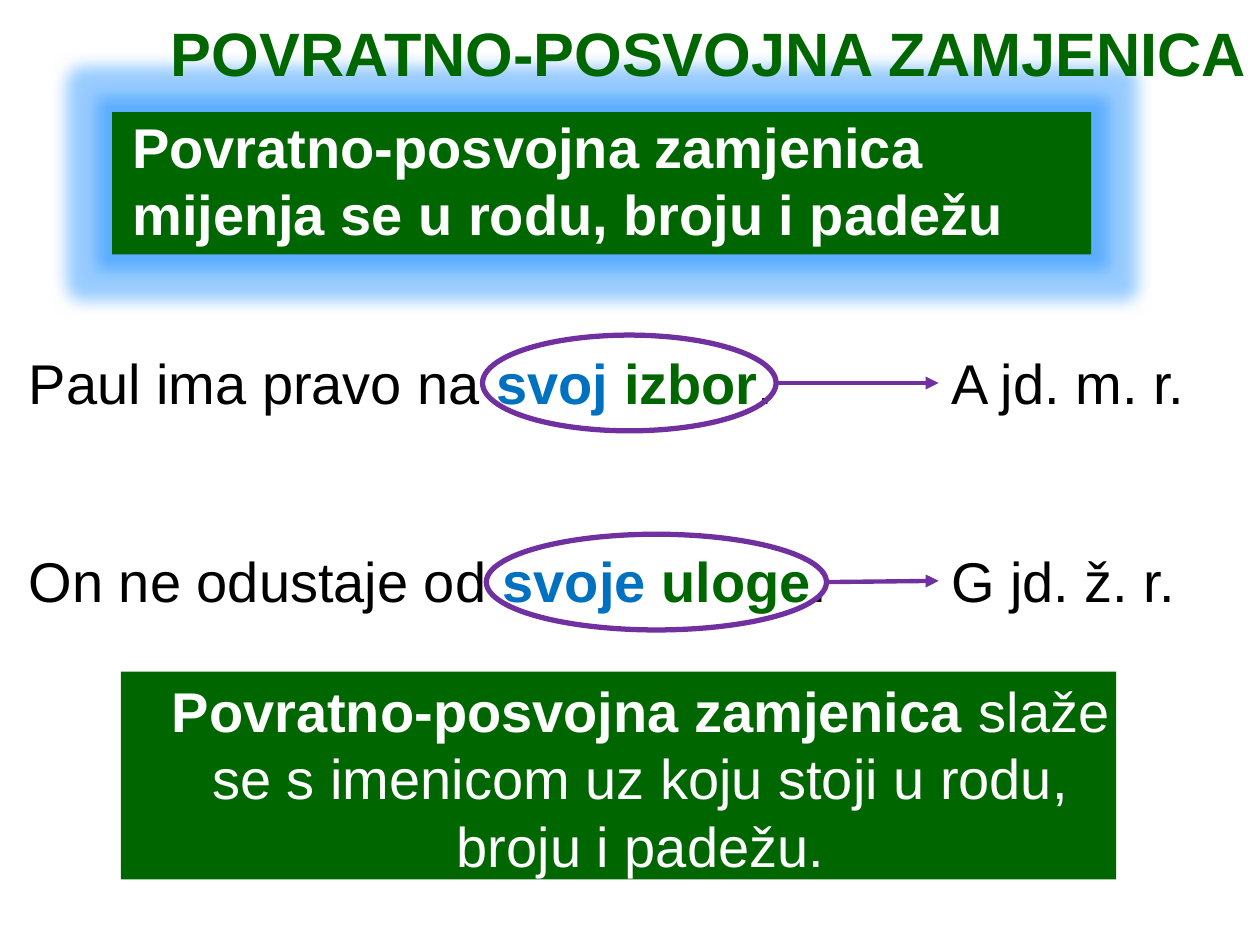
from dataclasses import dataclass

from lxml import etree
from pptx import Presentation
from pptx.dml.color import RGBColor
from pptx.enum import shapes, text
from pptx.oxml import parse_xml
from pptx.oxml.ns import nsdecls, qn
from pptx.util import Inches, Pt


@dataclass(frozen=True)
class Theme:
    font: str = "Arial"
    title_size: int = 35
    text_size: int = 32
    green: str = "006600"
    blue: str = "0070C0"
    purple: str = "7030A0"
    black: str = "000000"
    white: str = "FFFFFF"
    glow: str = "0080FF"


THEME = Theme()
MIDDLE = text.MSO_ANCHOR.MIDDLE
TOP = text.MSO_ANCHOR.TOP
BOTTOM = text.MSO_ANCHOR.BOTTOM
LEFT, CENTER, RIGHT = text.PP_ALIGN.LEFT, text.PP_ALIGN.CENTER, text.PP_ALIGN.RIGHT

TITLE = "POVRATNO-POSVOJNA ZAMJENICA"
RULES = [
    dict(runs=[("Povratno-posvojna zamjenica mijenja se u rodu, broju i padežu", THEME.white, True)],
         panel=(0.89, 0.89, 7.77, 1.13), box=(0.98, 0.65, 7.88, 1.35),
         align=LEFT, anchor=BOTTOM, glow=True),
    dict(runs=[("Povratno-posvojna zamjenica ", THEME.white, True),
               ("slaže se s imenicom uz koju stoji u rodu, broju i padežu.", THEME.white, False)],
         panel=(0.96, 5.33, 7.9, 1.65), box=(1.08, 5.33, 8.01, 1.08),
         align=CENTER, anchor=TOP, glow=False),
]
# start, pronoun, noun, form, text top, text width, form width, ellipse box, arrow heights
EXAMPLES = [
    ("Paul ima pravo na ", "svoj ", "izbor", "A jd. m. r.", 2.72, 6.15, 2.07,
     (3.83, 2.66, 2.33, 0.76), (3.04, 3.04)),
    ("On ne odustaje od ", "svoje ", "uloge", "G jd. ž. r.", 4.29, 6.57, 2,
     (3.86, 4.24, 2.7, 0.76), (4.62, 4.61)),
]
SENTENCE_LEFT, FORM_LEFT, LINE_HEIGHT = 0.13, 7.45, 0.64


def color(value):
    return RGBColor.from_string(value)


def place(shape, box):
    shape.left, shape.top, shape.width, shape.height = map(Inches, box)


def write(shape, runs, size=THEME.text_size, align=LEFT, anchor=TOP, wrap=True,
          before=0, spacing=1.0, margins=(0.1, 0.05)):
    """Fill a shape with one unbulleted paragraph of (words, colour, bold) runs."""
    frame = shape.text_frame
    frame.word_wrap, frame.vertical_anchor = wrap, anchor
    frame.auto_size = text.MSO_AUTO_SIZE.NONE if wrap else text.MSO_AUTO_SIZE.SHAPE_TO_FIT_TEXT
    frame.margin_left = frame.margin_right = Inches(margins[0])
    frame.margin_top = frame.margin_bottom = Inches(margins[1])
    paragraph = frame.paragraphs[0]
    paragraph.alignment, paragraph.line_spacing = align, spacing
    paragraph.space_before = Pt(before)
    properties = paragraph._p.get_or_add_pPr()
    properties.set("marL", "0")
    properties.set("indent", "0")
    etree.SubElement(properties, qn("a:buNone"))
    for words, tint, bold in runs:
        run = paragraph.add_run()
        run.text = words
        run.font.name, run.font.size, run.font.bold = THEME.font, Pt(size), bold
        run.font.color.rgb = color(tint)


def add_panel(slide, box, glow):
    panel = slide.shapes.add_shape(shapes.MSO_SHAPE.RECTANGLE, *map(Inches, box))
    panel.fill.solid()
    panel.fill.fore_color.rgb = color(THEME.green)
    panel.line.fill.background()
    panel.shadow.inherit = False
    if glow:
        panel._element.spPr.find(qn("a:effectLst")).append(parse_xml(
            f'<a:glow {nsdecls("a")} rad="{Pt(18)}"><a:srgbClr val="{THEME.glow}">'
            '<a:alpha val="40000"/></a:srgbClr></a:glow>'))
    # Panels lie behind the placeholders that hold their text.
    slide.shapes._spTree.insert(2, panel._element)


def add_ellipse(slide, box):
    ellipse = slide.shapes.add_shape(shapes.MSO_SHAPE.OVAL, *map(Inches, box))
    ellipse.fill.background()
    ellipse.line.color.rgb = color(THEME.purple)
    ellipse.line.width = Pt(3)
    ellipse.shadow.inherit = False


def add_arrow(slide, start, end):
    arrow = slide.shapes.add_connector(
        shapes.MSO_CONNECTOR.STRAIGHT, *map(Inches, start + end))
    arrow.line.color.rgb = color(THEME.purple)
    arrow.line.width = Pt(2.5)
    etree.SubElement(arrow.line._get_or_add_ln(), qn("a:tailEnd"), type="triangle")
    etree.SubElement(arrow._element.spPr, qn("a:effectLst"))


def add_example(slide, start, pronoun, noun, form, top, width, form_width, ellipse, heights):
    sentence = [(start, THEME.black, False), (pronoun, THEME.blue, True),
                (noun, THEME.green, True), (".", THEME.black, False)]
    for left, span, runs in [(SENTENCE_LEFT, width, sentence),
                             (FORM_LEFT, form_width, [(form, THEME.black, False)])]:
        box = slide.shapes.add_textbox(*map(Inches, (left, top, span, LINE_HEIGHT)))
        write(box, runs, wrap=False)
    add_arrow(slide, (ellipse[0] + ellipse[2], heights[0]), (FORM_LEFT, heights[1]))
    add_ellipse(slide, ellipse)


def main():
    deck = Presentation()
    deck.slide_width, deck.slide_height = Inches(10), Inches(7.5)
    slide = deck.slides.add_slide(deck.slide_layouts.get_by_name("Two Content"))
    title, *bodies = slide.placeholders
    place(title, (-0.44, 0, 10.44, 0.76))
    write(title, [(TITLE, THEME.green, True)], size=THEME.title_size,
          align=RIGHT, anchor=BOTTOM, spacing=0.9)
    for body, rule in zip(bodies, RULES):
        add_panel(slide, rule["panel"], rule["glow"])
        place(body, rule["box"])
        write(body, rule["runs"], align=rule["align"], anchor=rule["anchor"],
              before=10, margins=(0.07, 0.04))
    for example in EXAMPLES:
        add_example(slide, *example)
    deck.save("out.pptx")


if __name__ == "__main__":
    main()
